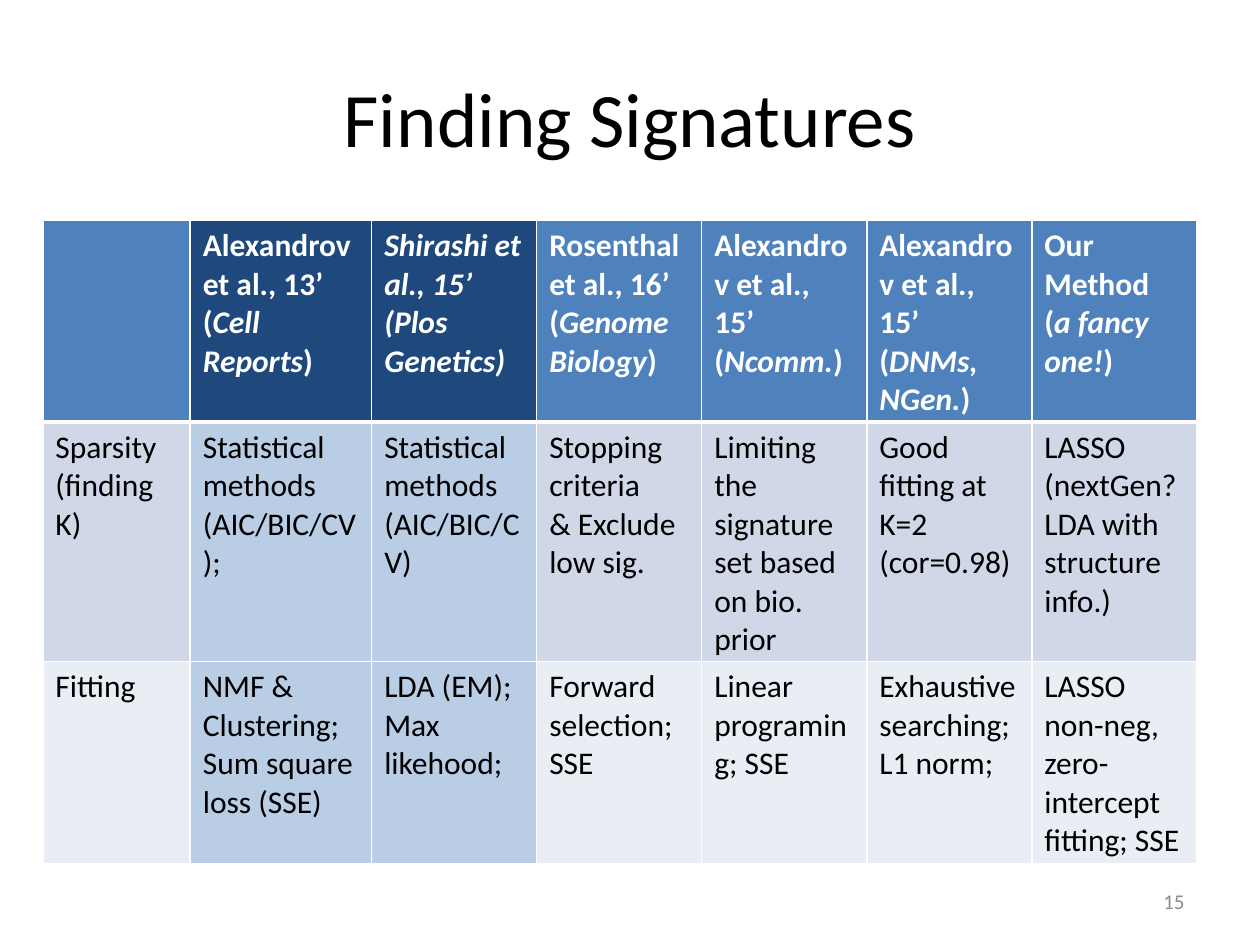
"""Build the Finding Signatures slide with its method comparison table."""
import lxml.etree
import pptx
import pptx.dml.color
import pptx.enum.text
import pptx.oxml.ns
import pptx.util

Inches, Pt = pptx.util.Inches, pptx.util.Pt
RGBColor = pptx.dml.color.RGBColor
ALIGN, ANCHOR = pptx.enum.text.PP_ALIGN, pptx.enum.text.MSO_ANCHOR

WHITE = RGBColor(0xFF, 0xFF, 0xFF)
BLACK = RGBColor(0x00, 0x00, 0x00)
GREY = RGBColor(0x8C, 0x8C, 0x8C)
BLUE = RGBColor(0x4F, 0x81, 0xBD)
NAVY = RGBColor(0x1F, 0x49, 0x7D)
SKY = RGBColor(0xB9, 0xCD, 0xE5)
MIST = RGBColor(0xD0, 0xD8, 0xE8)
PALE = RGBColor(0xE9, 0xED, 0xF4)

TITLE = "Finding Signatures"
PAGE_NUMBER = "15"
METHODS = [
    ["", "Alexandrov et al., 13’ (*Cell Reports*)",
     "*Shirashi et al., 15’*\n*(Plos Genetics)*",
     "Rosenthal et al., 16’\n(*Genome Biology*)",
     "Alexandrov et al., 15’ \v(*Ncomm.*)",
     "Alexandrov et al., 15’ (*DNMs, NGen.*)",
     "Our Method\n(*a fancy one!*)"],
    ["Sparsity\n(finding K)", "Statistical methods (AIC/BIC/CV);",
     "Statistical methods (AIC/BIC/CV)",
     "Stopping criteria\n& Exclude low sig.",
     "Limiting the signature set based on bio. prior",
     "Good fitting at K=2 (cor=0.98)",
     "LASSO\n(nextGen?LDA with structure info.)"],
    ["Fitting", "NMF & Clustering;\nSum square loss (SSE)",
     "LDA (EM);\nMax likehood;", "Forward selection;\nSSE",
     "Linear programing; SSE", "Exhaustive searching;\nL1 norm;",
     "LASSO non-neg, zero-intercept fitting; SSE"],
]
ROW_FILLS = [(BLUE, NAVY), (MIST, SKY), (PALE, SKY)]
HIGHLIGHTED_COLUMNS = (1, 2)
COLUMN_WIDTHS = [1.17, 1.44] + [1.31] * 5
ROW_HEIGHTS = [1.4, 1.36, 1.36]

TITLE_FORMAT = {"name": "Calibri", "size": Pt(44), "bold": False}
NUMBER_FORMAT = {"name": "Calibri", "size": Pt(12), "bold": False}
HEADING_FORMAT = {"name": "Calibri", "size": Pt(18), "bold": True}
BODY_FORMAT = {"name": "Calibri", "size": Pt(18), "bold": False}


def set_format(font, values, colour):
    for attribute, value in values.items():
        setattr(font, attribute, value)
    font.color.rgb = colour


def write_marked(frame, text, values, colour):
    """Write lines as paragraphs, with the words between asterisks in italics."""
    for number, line in enumerate(text.split("\n")):
        paragraph = frame.add_paragraph() if number else frame.paragraphs[0]
        set_format(paragraph.font, values, colour)
        for part_number, part in enumerate(line.split("*")):
            for piece_number, piece in enumerate(part.split("\v")):
                if piece_number:
                    paragraph.add_line_break()
                if piece:
                    run = paragraph.add_run()
                    run.text = piece
                    set_format(run.font, values, colour)
                    run.font.italic = part_number % 2 == 1


def add_label(slide, text, area, align, values, colour):
    frame = slide.shapes.add_textbox(*map(Inches, area)).text_frame
    frame.word_wrap = True
    frame.vertical_anchor = ANCHOR.MIDDLE
    frame.paragraphs[0].alignment = align
    write_marked(frame, text, values, colour)


def set_borders(cell, widths):
    properties = cell._tc.get_or_add_tcPr()
    qn = pptx.oxml.ns.qn
    for side, width in widths.items():
        border = lxml.etree.SubElement(properties, qn(f"a:ln{side}"), w=str(Pt(width)))
        solid = lxml.etree.SubElement(border, qn("a:solidFill"))
        lxml.etree.SubElement(solid, qn("a:srgbClr"), val=str(WHITE))


def add_methods(slide):
    area = (0.34, 1.75, sum(COLUMN_WIDTHS), sum(ROW_HEIGHTS))
    table = slide.shapes.add_table(
        len(METHODS), len(COLUMN_WIDTHS), *map(Inches, area)).table
    table.first_row = table.horz_banding = False
    for column, width in zip(table.columns, COLUMN_WIDTHS):
        column.width = Inches(width)
    for r, (texts, fills) in enumerate(zip(METHODS, ROW_FILLS)):
        table.rows[r].height = Inches(ROW_HEIGHTS[r])
        values, colour = (BODY_FORMAT, BLACK) if r else (HEADING_FORMAT, WHITE)
        borders = {"L": 1, "R": 1, "T": 3 if r == 1 else 1, "B": 1 if r else 3}
        for c, text in enumerate(texts):
            cell = table.cell(r, c)
            set_borders(cell, borders)
            cell.fill.solid()
            cell.fill.fore_color.rgb = fills[c in HIGHLIGHTED_COLUMNS]
            write_marked(cell.text_frame, text, values, colour)


def main():
    deck = pptx.Presentation()
    deck.slide_width, deck.slide_height = Inches(10), Inches(7.5)
    slide = deck.slides.add_slide(deck.slide_layouts[6])
    add_label(slide, TITLE, (0.5, 0.3, 9, 1.25), ALIGN.CENTER, TITLE_FORMAT, BLACK)
    add_label(slide, PAGE_NUMBER, (7.17, 6.95, 2.33, 0.4), ALIGN.RIGHT,
              NUMBER_FORMAT, GREY)
    add_methods(slide)
    deck.save("out.pptx")


if __name__ == "__main__":
    main()
